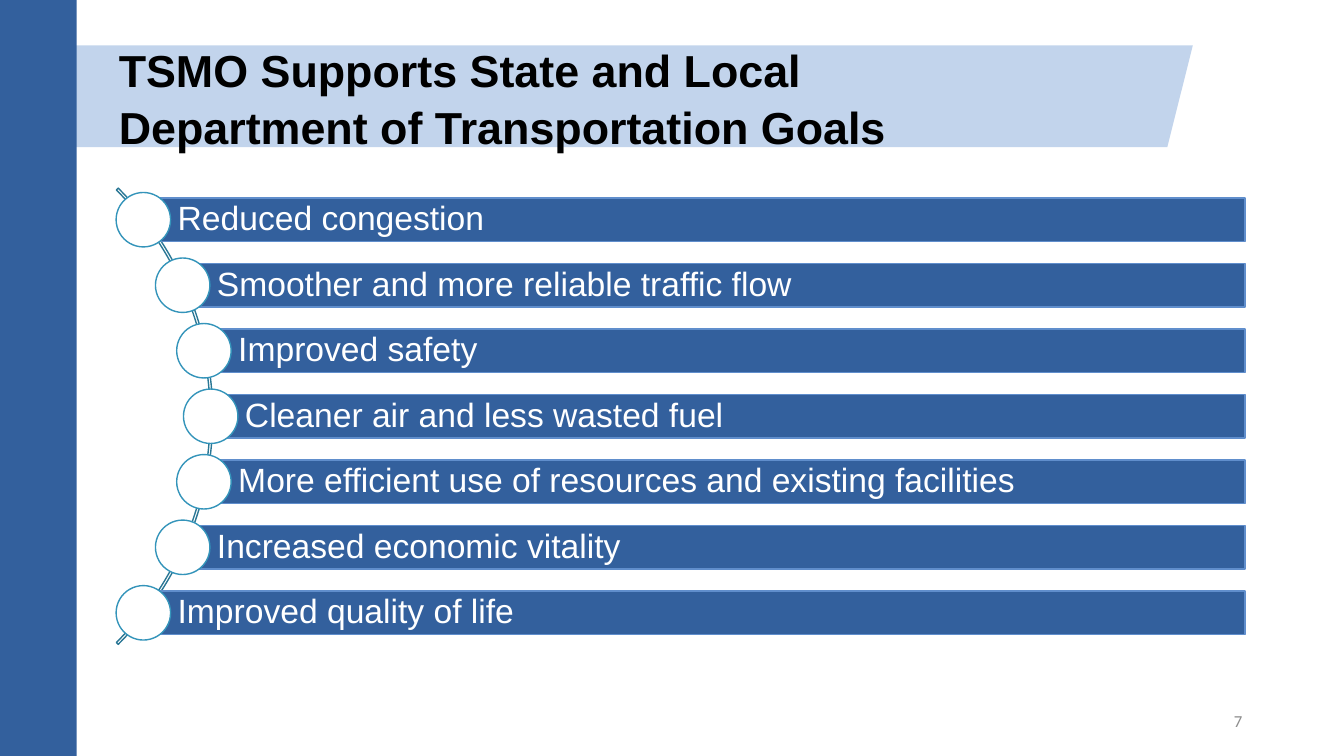
from math import sqrt

from pptx import Presentation
from pptx.dml.color import RGBColor
from pptx.enum.shapes import MSO_SHAPE
from pptx.enum.text import MSO_ANCHOR, PP_ALIGN
from pptx.util import Inches, Pt

RECT, OVAL = MSO_SHAPE.RECTANGLE, MSO_SHAPE.OVAL
BAND, ARC = MSO_SHAPE.PARALLELOGRAM, MSO_SHAPE.BLOCK_ARC
TOP, MIDDLE = MSO_ANCHOR.TOP, MSO_ANCHOR.MIDDLE
LEFT, RIGHT = PP_ALIGN.LEFT, PP_ALIGN.RIGHT

# Content
TITLE = "TSMO Supports State and Local\vDepartment of Transportation Goals"
GOALS = [
    "Reduced congestion",
    "Smoother and more reliable traffic flow",
    "Improved safety",
    "Cleaner air and less wasted fuel",
    "More efficient use of resources and existing facilities",
    "Increased economic vitality",
    "Improved quality of life",
]
PAGE = "7"

THEME = {
    "blue": "33609D", "band": "C2D4EC", "bar_line": "608ECC",
    "arc_line": "2A7795", "dot_line": "3494BA",
    "white": "FFFFFF", "black": "000000", "grey": "8C8C8C",
    "font": "Arial", "page_font": "Calibri",
    "title": 32, "body": 24, "page": 12,
}

# Layout in inches: dots sit on a circle, one per goal
ARC_X, ARC_Y, ARC_R = -1.09, 4.13, 3.2
DOT_R, DOT_D = 3.18, 0.54
PITCH, BAR_H, BAR_RIGHT = 0.65, 0.43, 12.35


def color(name):
    return RGBColor.from_string(THEME[name])


def add_shape(s, kind, box, fill=None, line=None):
    sp = s.shapes.add_shape(kind, *map(Inches, box))
    sp.shadow.inherit = False
    if fill:
        sp.fill.solid()
        sp.fill.fore_color.rgb = color(fill)
    else:
        sp.fill.background()
    if line:
        sp.line.color.rgb = color(line)
        sp.line.width = Pt(1)
    else:
        sp.line.fill.background()
    return sp


def set_text(sp, text, size, ink, font="font", align=LEFT, anchor=MIDDLE,
             insets=(0.1, 0.05, 0.1, 0.05), spacing=1.0, bold=False):
    tf = sp.text_frame
    tf.word_wrap = True
    tf.vertical_anchor = anchor
    (tf.margin_left, tf.margin_top,
     tf.margin_right, tf.margin_bottom) = map(Inches, insets)
    p = tf.paragraphs[0]
    p.text = text
    p.alignment = align
    p.line_spacing = spacing
    p.font.name = THEME[font]
    p.font.size = Pt(THEME[size])
    p.font.bold = bold
    p.font.color.rgb = color(ink)


def add_goal(s, text, offset):
    x = ARC_X + sqrt(DOT_R ** 2 - offset ** 2)
    y = ARC_Y + offset
    bar = add_shape(s, RECT, (x, y - BAR_H / 2, BAR_RIGHT - x, BAR_H),
                    "blue", "bar_line")
    set_text(bar, text, "body", "white", spacing=0.9,
             insets=(0.34, 0.07, 0.07, 0.07))
    add_shape(s, OVAL, (x - DOT_D / 2, y - DOT_D / 2, DOT_D, DOT_D),
              "white", "dot_line")


def main():
    prs = Presentation()
    prs.slide_width, prs.slide_height = Inches(13.33), Inches(7.5)
    s = prs.slides.add_slide(prs.slide_layouts[6])

    # Title band and side bar
    add_shape(s, BAND, (0.24, 0.45, 11.59, 1.01), "band")
    add_shape(s, RECT, (0, 0, 0.76, 7.5), "blue")
    title = s.shapes.add_textbox(*map(Inches, (1.08, 0.35, 9.84, 1.1)))
    set_text(title, TITLE, "title", "black", anchor=TOP, spacing=1.05,
             bold=True)

    # Arc from -45 to 45 degrees
    arc = add_shape(s, ARC, (ARC_X - ARC_R, ARC_Y - ARC_R, 2 * ARC_R, 2 * ARC_R),
                    line="arc_line")
    for i, value in enumerate((189, 27, 0.004)):
        arc.adjustments[i] = value

    # Goals
    middle = (len(GOALS) - 1) / 2
    for i, goal in enumerate(GOALS):
        add_goal(s, goal, (i - middle) * PITCH)

    # Page number
    page = s.shapes.add_textbox(*map(Inches, (9.42, 6.95, 3, 0.4)))
    set_text(page, PAGE, "page", "grey", font="page_font", align=RIGHT)

    prs.save("out.pptx")


if __name__ == "__main__":
    main()
